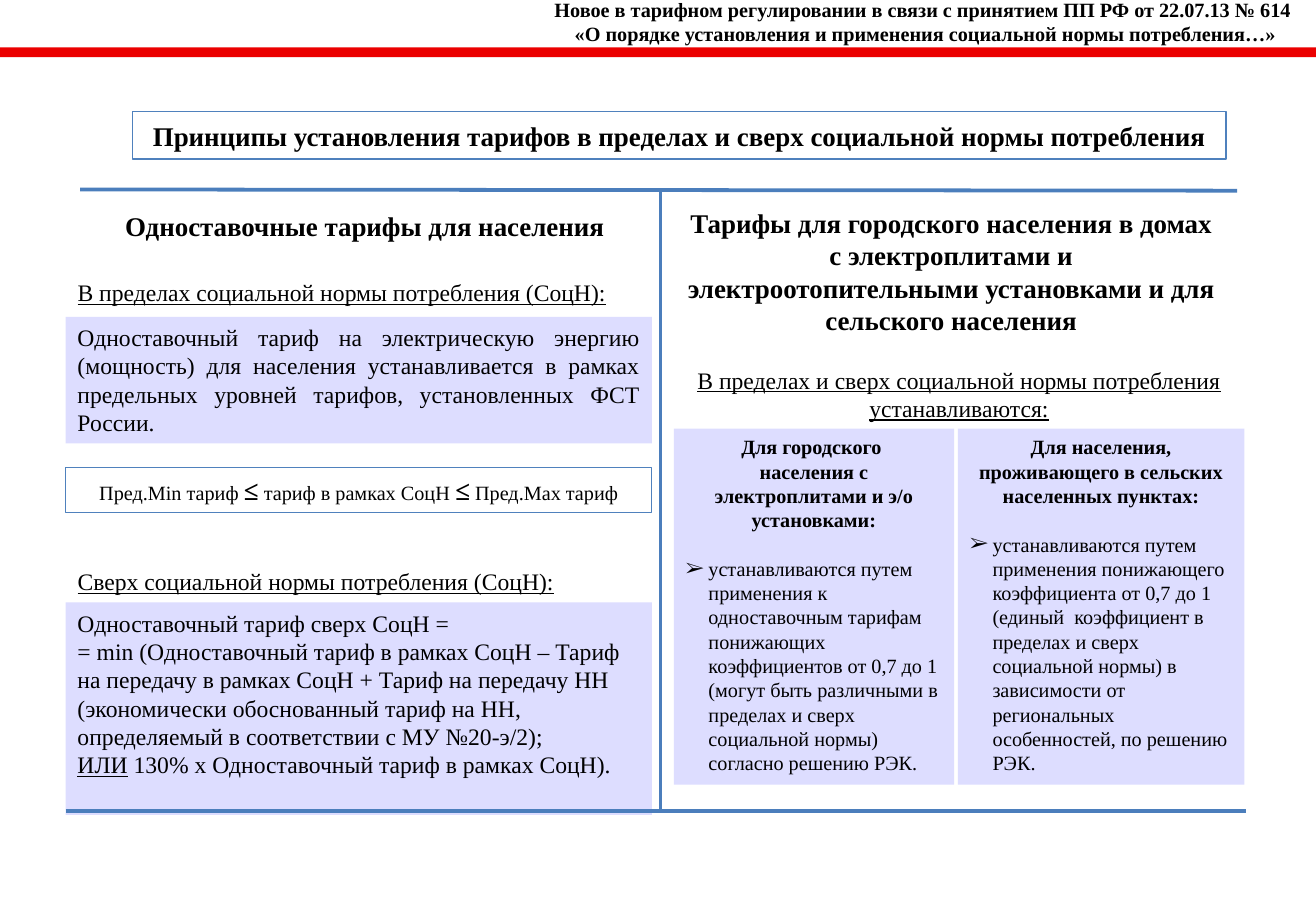
from lxml import etree
from pptx import Presentation
from pptx.dml.color import RGBColor
from pptx.enum.shapes import MSO_CONNECTOR, MSO_SHAPE
from pptx.enum.text import MSO_ANCHOR, PP_ALIGN
from pptx.oxml.ns import qn
from pptx.util import Pt

FONT = "Times New Roman"
BLACK, RED, LILAC = "000000", "EB0000", "DDDDFF"
RULE_BLUE, FRAME_BLUE = "4B7EBC", "4F81BD"
PAGE_WIDTH, PAGE_HEIGHT = 780.48, 540
LEFT, COLUMN_WIDTH = 38.88, 347.76
CENTER, JUSTIFY = PP_ALIGN.CENTER, PP_ALIGN.JUSTIFY


def colour(value):
    return RGBColor.from_string(value)


def style(span, size, bold=False, underline=False):
    span.font.name = FONT
    span.font.size = Pt(size)
    span.font.bold = bold
    span.font.underline = underline
    span.font.color.rgb = colour(BLACK)


def add_bullet(para, indent):
    properties = para._p.get_or_add_pPr()
    properties.set("marL", str(Pt(indent)))
    properties.set("indent", str(Pt(-indent)))
    etree.SubElement(properties, qn("a:buFont")).set("typeface", FONT)
    etree.SubElement(properties, qn("a:buChar")).set("char", "➢")


def write(box, lines, size, align=PP_ALIGN.LEFT, bold=False, underline=False,
          anchor=MSO_ANCHOR.TOP):
    frame = box.text_frame
    frame.word_wrap = True
    frame.vertical_anchor = anchor
    frame.text = "\n".join(lines)
    for para in frame.paragraphs:
        para.alignment = align
        for span in para.runs:
            style(span, size, bold, underline)


def add_label(page, place, lines, size, **look):
    box = page.shapes.add_textbox(*map(Pt, place))
    write(box, lines, size, **look)


def add_panel(page, place, fill=None, line=None):
    box = page.shapes.add_shape(MSO_SHAPE.RECTANGLE, *map(Pt, place))
    box.shadow.inherit = False
    if fill:
        box.fill.solid()
        box.fill.fore_color.rgb = colour(fill)
    else:
        box.fill.background()
    if line:
        box.line.color.rgb = colour(line)
        box.line.width = Pt(0.75)
    else:
        box.line.fill.background()
    return box


def add_rule(page, *ends):
    rule = page.shapes.add_connector(MSO_CONNECTOR.STRAIGHT, *map(Pt, ends))
    rule.line.color.rgb = colour(RULE_BLUE)
    rule.line.width = Pt(2.25)
    etree.SubElement(rule._element.spPr, qn("a:effectLst"))


def add_group_panel(page, place, heading, rule_text):
    box = add_panel(page, place, fill=LILAC)
    write(box, heading, 12, align=CENTER, bold=True)
    para = box.text_frame.add_paragraph()
    para.text = rule_text
    para.alignment = PP_ALIGN.LEFT
    para.space_before = Pt(14.4)
    add_bullet(para, 13.5)
    style(para.runs[0], 12)


def add_formula(page, place):
    box = add_panel(page, place, line=FRAME_BLUE)
    frame = box.text_frame
    frame.word_wrap = True
    frame.vertical_anchor = MSO_ANCHOR.MIDDLE
    para = frame.paragraphs[0]
    para.alignment = CENTER
    for text in ("Пред.Min тариф ", "≤", " тариф в рамках СоцН ", "≤", " Пред.Max тариф"):
        span = para.add_run()
        span.text = text
        is_sign = text == "≤"
        style(span, 16 if is_sign else 12, bold=is_sign)


def add_left_column(page):
    add_label(page, (51.84, 120.96, 329.04, 26.64), ["Одноставочные тарифы для населения"],
              16, align=CENTER, bold=True)
    add_label(page, (LEFT, 161.28, 337.68, 24.48),
              ["В пределах социальной нормы потребления (СоцН):"], 14, underline=True)
    within = add_panel(page, (LEFT, 187.92, COLUMN_WIDTH, 74.88), fill=LILAC)
    write(within, ["Одноставочный тариф на электрическую энергию (мощность) для населения "
                   "устанавливается в рамках предельных уровней тарифов, установленных "
                   "ФСТ России."], 14, align=JUSTIFY)
    add_formula(page, (LEFT, 277.2, COLUMN_WIDTH, 26.64))
    add_label(page, (LEFT, 332.64, 303.84, 24.48),
              ["Сверх социальной нормы потребления (СоцН):"], 14, underline=True)
    above = add_panel(page, (LEFT, 357.12, COLUMN_WIDTH, 126), fill=LILAC)
    write(above, ["Одноставочный тариф сверх СоцН =",
                  "= min (Одноставочный тариф в рамках СоцН – Тариф на передачу в рамках "
                  "СоцН + Тариф на передачу НН (экономически обоснованный тариф на НН, "
                  "определяемый в соответствии с МУ №20-э/2);",
                  "ИЛИ"], 14)
    last = above.text_frame.paragraphs[-1]
    last.runs[0].font.underline = True
    span = last.add_run()
    span.text = " 130% x Одноставочный тариф в рамках СоцН)."
    style(span, 14)


def add_right_column(page):
    add_label(page, (399.6, 118.8, 329.04, 84.96),
              ["Тарифы для городского населения в домах с электроплитами и "
               "электроотопительными установками и для сельского населения"],
              16, align=CENTER, bold=True)
    add_label(page, (397.44, 213.12, 342.72, 41.04),
              ["В пределах и сверх социальной нормы потребления устанавливаются:"],
              14, align=CENTER, underline=True)
    add_group_panel(page, (399.6, 254.16, 166.32, 210.96),
                    ["Для городского ", "населения с электроплитами и э/о установками:"],
                    "устанавливаются путем применения к одноставочным тарифам понижающих "
                    "коэффициентов от 0,7 до 1 (могут быть различными в пределах и сверх "
                    "социальной нормы) согласно решению РЭК.")
    add_group_panel(page, (568.08, 254.16, 169.92, 210.96),
                    ["Для населения, проживающего в сельских населенных пунктах:"],
                    "устанавливаются путем применения понижающего коэффициента от 0,7 до 1 "
                    "(единый  коэффициент в пределах и сверх социальной нормы) в зависимости "
                    "от региональных особенностей, по решению РЭК.")


def main():
    deck = Presentation()
    deck.slide_width, deck.slide_height = Pt(PAGE_WIDTH), Pt(PAGE_HEIGHT)
    page = deck.slides.add_slide(deck.slide_layouts[6])

    # Header band
    add_panel(page, (0, 28.08, PAGE_WIDTH, 5.76), fill=RED)
    add_label(page, (317.52, -5.04, 462.96, 33.84),
              ["Новое в тарифном регулировании в связи с принятием ПП РФ от 22.07.13 № 614 ",
               "«О порядке установления и применения социальной нормы потребления…»"],
              12, align=CENTER, bold=True)

    # Two columns
    add_left_column(page)
    add_right_column(page)

    # Title
    title = add_panel(page, (78.48, 66.24, 648.72, 28.08), line=FRAME_BLUE)
    write(title, ["Принципы установления тарифов в пределах и сверх социальной нормы "
                  "потребления"], 16, align=CENTER, bold=True, anchor=MSO_ANCHOR.MIDDLE)

    # Dividing rules
    add_rule(page, 47.52, 112.32, 733.68, 113.04)
    add_rule(page, 391.68, 113.04, 391.68, 481.68)
    add_rule(page, LEFT, 480.96, 738.72, 480.96)

    deck.save("out.pptx")


if __name__ == "__main__":
    main()
